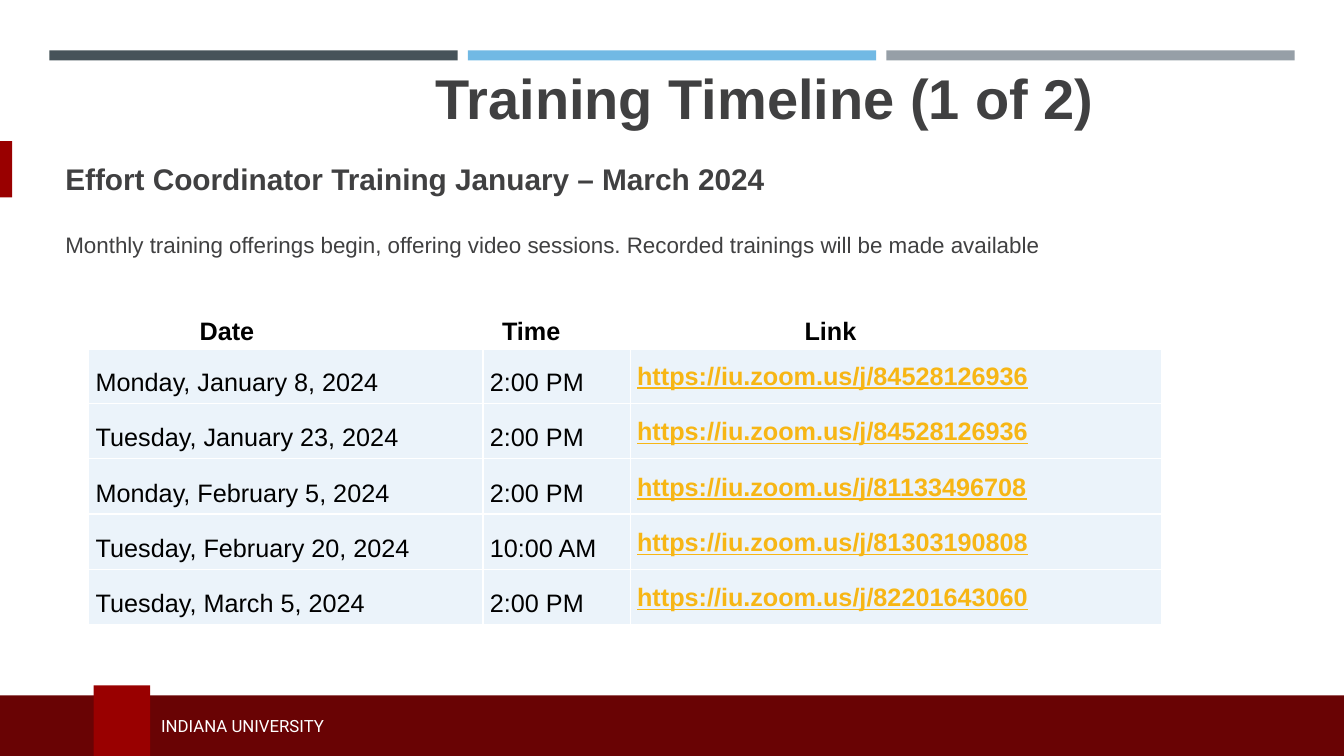
from dataclasses import dataclass
from typing import Any

from lxml.etree import SubElement
from pptx import Presentation
from pptx.dml.color import RGBColor
from pptx.enum.shapes import MSO_SHAPE
from pptx.enum.text import MSO_ANCHOR, PP_ALIGN
from pptx.oxml.ns import qn
from pptx.util import Inches, Pt


@dataclass(frozen=True)
class Theme:
    white: str = "FFFFFF"
    black: str = "000000"
    text: str = "404041"
    slate: str = "465359"
    sky: str = "71B9E4"
    silver: str = "969FA7"
    crimson: str = "990000"
    maroon: str = "690304"
    row: str = "EBF3FA"
    link: str = "F7B615"
    font: str = "Arial"
    footer_font: str = "Roboto"
    title_size: float = 40
    heading_size: float = 21.3
    body_size: float = 16
    table_size: float = 18
    footer_size: float = 12


@dataclass(frozen=True)
class Box:
    left: float
    top: float
    width: float
    height: float

    def lengths(self) -> tuple[int, int, int, int]:
        return Inches(self.left), Inches(self.top), Inches(self.width), Inches(self.height)


@dataclass(frozen=True)
class Block:
    box: Box
    color: str


@dataclass(frozen=True)
class Heading:
    text: str
    left_inset: float
    margin: float
    indent: float


@dataclass(frozen=True)
class Session:
    date: str
    time: str
    meeting: str


THEME = Theme()
BLOCKS = [
    *(
        Block(Box(0.49 + 4.15 * index, 0.5, 4.05, 0.1), color)
        for index, color in enumerate([THEME.slate, THEME.sky, THEME.silver])
    ),
    Block(Box(0, 1.4, 0.12, 0.56), THEME.crimson),
    Block(Box(0, 6.9, 13.33, 0.6), THEME.maroon),
    Block(Box(0.93, 6.8, 0.56, 0.7), THEME.crimson),
]
TABLE_BOX = Box(0.88, 2.9, 10.64, 3.3)
COLUMN_WIDTHS = [3.91, 1.46, 5.27]
HEADINGS = [
    Heading("Date", 0.1, 0.69, 0.31),
    Heading("Time", 0.07, 0, 0.12),
    Heading("Link", 1.61, 0, 0.12),
]
SESSIONS = [
    Session("Monday, January 8, 2024", "2:00 PM", "84528126936"),
    Session("Tuesday, January 23, 2024", "2:00 PM", "84528126936"),
    Session("Monday, February 5, 2024", "2:00 PM", "81133496708"),
    Session("Tuesday, February 20, 2024", "10:00 AM", "81303190808"),
    Session("Tuesday, March 5, 2024", "2:00 PM", "82201643060"),
]


def write_text(
    frame: Any,
    text: str,
    *,
    size: float,
    color: str,
    font: str = THEME.font,
    bold: bool = False,
    underline: bool = False,
    align: PP_ALIGN = PP_ALIGN.LEFT,
    line_spacing: float = 1.0,
    space_after: float = 0,
    margin: float = 0,
    indent: float = 0,
) -> None:
    paragraph = frame.paragraphs[0]
    paragraph.alignment = align
    paragraph.line_spacing = line_spacing
    paragraph.space_after = Pt(space_after)
    properties = paragraph._p.get_or_add_pPr()
    properties.set("marL", str(Inches(margin)))
    properties.set("indent", str(Inches(indent)))
    run = paragraph.add_run()
    run.text = text
    run.font.name = font
    run.font.size = Pt(size)
    run.font.bold = bold
    run.font.underline = underline
    run.font.color.rgb = RGBColor.from_string(color)


def add_block(slide: Any, block: Block) -> None:
    shape = slide.shapes.add_shape(MSO_SHAPE.RECTANGLE, *block.box.lengths())
    shape.shadow.inherit = False
    shape.fill.solid()
    shape.fill.fore_color.rgb = RGBColor.from_string(block.color)
    shape.line.fill.background()


def add_text(
    slide: Any, box: Box, text: str, anchor: MSO_ANCHOR = MSO_ANCHOR.MIDDLE, **text_format: Any
) -> None:
    frame = slide.shapes.add_textbox(*box.lengths()).text_frame
    frame.word_wrap = True
    frame.vertical_anchor = anchor
    write_text(frame, text, **text_format)


def style_cell(
    cell: Any, fill: str, left_inset: float = 0.07, top_inset: float = 0, bottom_border: float = 1
) -> None:
    cell.vertical_anchor = MSO_ANCHOR.MIDDLE
    cell.margin_left = Inches(left_inset)
    cell.margin_right = Inches(0.07)
    cell.margin_top = Inches(top_inset)
    cell.margin_bottom = 0
    properties = cell._tc.get_or_add_tcPr()
    for side, width in {"lnL": 1, "lnR": 1, "lnT": 1, "lnB": bottom_border}.items():
        border = SubElement(properties, qn(f"a:{side}"), w=str(Pt(width)))
        solid = SubElement(border, qn("a:solidFill"))
        SubElement(solid, qn("a:srgbClr"), val=THEME.white)
    cell.fill.solid()
    cell.fill.fore_color.rgb = RGBColor.from_string(fill)


def add_schedule(slide: Any) -> None:
    row_count = len(SESSIONS) + 1
    table = slide.shapes.add_table(row_count, len(HEADINGS), *TABLE_BOX.lengths()).table
    table.first_row = False
    table.horz_banding = False
    for column, width in zip(table.columns, COLUMN_WIDTHS):
        column.width = Inches(width)
    for row in table.rows:
        row.height = Inches(TABLE_BOX.height / row_count)
    for column_index, heading in enumerate(HEADINGS):
        cell = table.cell(0, column_index)
        style_cell(cell, THEME.white, heading.left_inset, 0.1, 3)
        write_text(
            cell.text_frame, heading.text, size=THEME.table_size, color=THEME.black, bold=True,
            line_spacing=1.5, space_after=0.5, margin=heading.margin, indent=heading.indent,
        )
    plain = {"color": THEME.black, "line_spacing": 1.5}
    linked = {
        "color": THEME.link, "bold": True, "underline": True,
        "line_spacing": 1.07, "space_after": 8,
    }
    for row_index, session in enumerate(SESSIONS, start=1):
        entries = [
            (session.date, plain),
            (session.time, plain),
            (f"https://iu.zoom.us/j/{session.meeting}", linked),
        ]
        for column_index, (text, text_format) in enumerate(entries):
            cell = table.cell(row_index, column_index)
            style_cell(cell, THEME.row)
            write_text(cell.text_frame, text, size=THEME.table_size, **text_format)


def main() -> None:
    presentation = Presentation()
    presentation.slide_width = Inches(13.33)
    presentation.slide_height = Inches(7.5)
    slide = presentation.slides.add_slide(presentation.slide_layouts[6])
    for block in BLOCKS:
        add_block(slide, block)
    add_text(slide, Box(1.5, 7.05, 5.27, 0.3), "INDIANA UNIVERSITY",
             size=THEME.footer_size, color=THEME.white, font=THEME.footer_font)
    add_text(slide, Box(3.95, 0.58, 7.27, 0.77), "Training Timeline (1 of 2)", MSO_ANCHOR.BOTTOM,
             size=THEME.title_size, color=THEME.text, bold=True, align=PP_ALIGN.CENTER)
    add_text(slide, Box(0.55, 1.46, 7.27, 0.63), "Effort Coordinator Training January – March 2024",
             size=THEME.heading_size, color=THEME.text, bold=True, space_after=24)
    add_text(slide, Box(0.55, 2.13, 10.08, 0.59),
             "Monthly training offerings begin, offering video sessions. "
             "Recorded trainings will be made available",
             size=THEME.body_size, color=THEME.text, space_after=24)
    add_schedule(slide)
    presentation.save("out.pptx")


if __name__ == "__main__":
    main()
